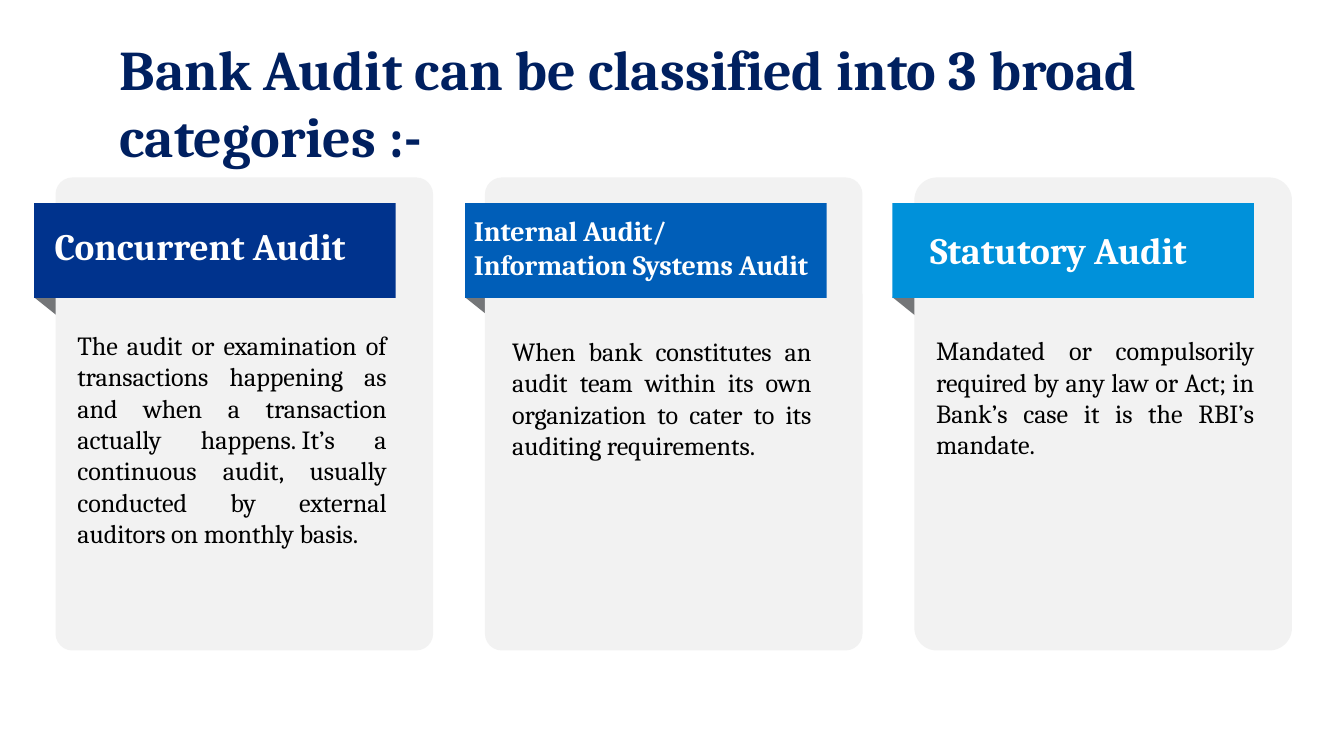
from dataclasses import dataclass

from pptx import Presentation, util as u
from pptx.dml.color import RGBColor
from pptx.enum import shapes, text

COLORS = {
    "title": "002060", "card": "F2F2F2", "fold": "747678", "body": "000000",
    "heading": "FFFFFF", "navy": "00338D", "blue": "005EB8", "sky": "0091DA",
}
FONT = "Cambria"
CELL = u.Inches(0.1)
CARD_LEFT, CARD_TOP, CARD_PITCH = 4.13, 13.2, 31.95
CARD_WIDTH, CARD_HEIGHT = 28.1, 35.2
RIBBON_TOP, RIBBON_WIDTH, RIBBON_HEIGHT = 1.92, 26.9, 7.05
FOLD = [(1.5, 5.1), (0, 7), (5.5, 11.4), (7, 9.4)]


@dataclass
class Category:
    heading: str
    body: str
    color: str
    heading_size: int
    heading_offset: tuple
    body_box: tuple
    ribbon_offset: float
    corner: float


CATEGORIES = [
    Category("Concurrent Audit",
             "The audit or examination of transactions happening as and when a "
             "transaction actually happens.\u00a0It’s a continuous audit, usually "
             "conducted by external auditors on monthly basis.",
             "navy", 20, (1.53, 1.5), (1.63, 11.3, 23, 16.5), -1.6, 0.045),
    Category("Internal Audit/\nInformation Systems Audit",
             "When bank constitutes an audit team within its own organization to "
             "cater to its auditing requirements.",
             "blue", 15, (0.67, 0.78), (2.03, 11.75, 22.25, 12.6), -1.48, 0.045),
    Category("Statutory Audit",
             "Mandated or compulsorily required by any law or Act; in Bank’s case "
             "it is the RBI’s mandate.",
             "sky", 20, (2.8, 1.8), (1.63, 11.7, 23.65, 12.6), -1.63, 0.06),
]


def cells(*values):
    return [round(value * CELL) for value in values]


def paint(shape, color):
    shape.shadow.inherit = False
    shape.fill.solid()
    shape.fill.fore_color.rgb = RGBColor.from_string(COLORS[color])
    shape.line.fill.background()


def write(text_frame, content, size, color, bold=False, spacing=None,
          alignment=text.PP_ALIGN.LEFT, margin=0):
    text_frame.text = content
    text_frame.word_wrap = True
    text_frame.auto_size = text.MSO_AUTO_SIZE.NONE
    text_frame.vertical_anchor = text.MSO_ANCHOR.TOP
    text_frame.margin_left = text_frame.margin_right = u.Inches(margin)
    text_frame.margin_top = text_frame.margin_bottom = u.Inches(margin)
    for paragraph in text_frame.paragraphs:
        paragraph.alignment = alignment
        for run in paragraph.runs:
            run.font.name = FONT
            run.font.size = u.Pt(size)
            run.font.bold = bold
            run.font.color.rgb = RGBColor.from_string(COLORS[color])
            if spacing is not None:
                run.font._element.set("spc", str(spacing))


def add_title(slide, left, top, width, height):
    title = slide.shapes.title
    title.left, title.top, title.width, title.height = cells(left, top, width, height)
    write(title.text_frame, "Bank Audit can be classified into 3 broad categories :-",
          30, "title", bold=True, margin=0.1)


def add_fold(slide, left, top):
    points = [tuple(cells(left + x, top + y)) for x, y in FOLD]
    builder = slide.shapes.build_freeform(*points[0])
    builder.add_line_segments(points[1:], close=True)
    paint(builder.convert_to_shape(), "fold")


def add_ribbon(slide, category, left, top):
    ribbon = slide.shapes.add_shape(
        shapes.MSO_SHAPE.RECTANGLE, *cells(left, top, RIBBON_WIDTH, RIBBON_HEIGHT))
    paint(ribbon, category.color)
    x, y = category.heading_offset
    heading = slide.shapes.add_textbox(
        *cells(left + x, top + y, RIBBON_WIDTH - x, RIBBON_HEIGHT - y))
    write(heading.text_frame, category.heading, category.heading_size, "heading",
          bold=True, spacing=-5)


def add_card(slide, category, left, top, width, height):
    ribbon_left, ribbon_top = left + category.ribbon_offset, top + RIBBON_TOP
    add_fold(slide, ribbon_left, ribbon_top)

    card = slide.shapes.add_shape(
        shapes.MSO_SHAPE.ROUNDED_RECTANGLE, *cells(left, top, width, height))
    card.adjustments[0] = category.corner
    paint(card, "card")

    x, y, body_width, body_height = category.body_box
    body = slide.shapes.add_textbox(*cells(left + x, top + y, body_width, body_height))
    write(body.text_frame, category.body, 14, "body", spacing=-5,
          alignment=text.PP_ALIGN.JUSTIFY)

    add_ribbon(slide, category, ribbon_left, ribbon_top)


def main():
    presentation = Presentation()
    presentation.slide_width, presentation.slide_height = cells(100, 56.25)
    slide = presentation.slides.add_slide(presentation.slide_layouts[5])
    add_title(slide, 7.9, 1.57, 84.3, 6.3)
    for column, category in enumerate(CATEGORIES):
        add_card(slide, category, CARD_LEFT + column * CARD_PITCH, CARD_TOP,
                 CARD_WIDTH, CARD_HEIGHT)
    presentation.save("out.pptx")


if __name__ == "__main__":
    main()
